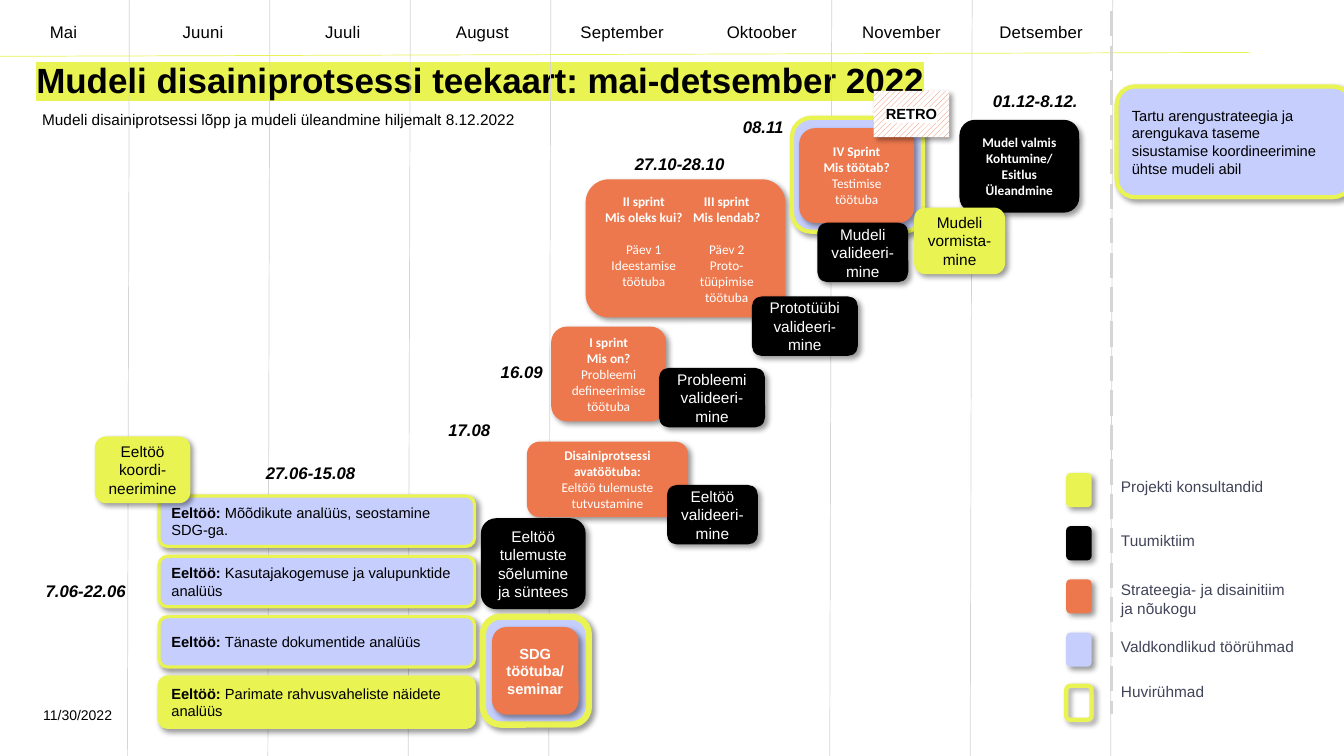
from typing import NamedTuple

from lxml.etree import SubElement
from pptx import Presentation
from pptx.dml.color import RGBColor
from pptx.enum.dml import MSO_LINE, MSO_PATTERN
from pptx.enum.shapes import MSO_CONNECTOR, MSO_SHAPE
from pptx.enum.text import MSO_ANCHOR, MSO_AUTO_SIZE, PP_ALIGN
from pptx.oxml.ns import qn
from pptx.util import Cm, Pt

BLACK = RGBColor(0x00, 0x00, 0x00)
WHITE = RGBColor(0xFF, 0xFF, 0xFF)
LIME = RGBColor(0xE9, 0xF3, 0x52)
ORANGE = RGBColor(0xEE, 0x78, 0x4D)
LILAC = RGBColor(0xC6, 0xCE, 0xFD)
GREY = RGBColor(0xD5, 0xD5, 0xD5)
SLATE = RGBColor(0x41, 0x43, 0x59)

MONTHS = ("Mai", "Juuni", "Juuli", "August", "September", "Oktoober", "November", "Detsember")


class Box(NamedTuple):
    left: float
    top: float
    width: float
    height: float

    def inner(self, left, top, width, height):
        return Box(self.left + left, self.top + top, width, height)

    def lengths(self):
        return [Cm(value) for value in self]


def bold(text):
    return [(text, True)]


def plain(text):
    return [(text, False)]


def highlight(span, color):
    fill = span.font._element.find(qn("a:solidFill"))
    mark = SubElement(span.font._element, qn("a:highlight"))
    SubElement(mark, qn("a:srgbClr"), val=str(color))
    fill.addnext(mark)


def write(frame, lines, size, color=BLACK, font="Arial", align=PP_ALIGN.LEFT, italic=False):
    frame.word_wrap = True
    for number, line in enumerate(lines):
        para = frame.add_paragraph() if number else frame.paragraphs[0]
        para.alignment = align
        for text, is_bold in line:
            span = para.add_run()
            span.text = text
            span.font.size = Pt(size)
            span.font.bold = is_bold
            span.font.italic = italic
            span.font.color.rgb = color
            span.font.name = font
    return frame


def add_label(page, box, lines, size=11, **style):
    return write(page.shapes.add_textbox(*box.lengths()).text_frame, lines, size, **style)


def add_date(page, box, text):
    add_label(page, box, [bold(text)], 12, italic=True)


def add_line(page, start, end, color, width=0.5):
    line = page.shapes.add_connector(MSO_CONNECTOR.STRAIGHT, *map(Cm, start + end))
    line.line.color.rgb = color
    line.line.width = Pt(width)
    SubElement(line._element.spPr, qn("a:effectLst"))
    return line


def add_card(page, box, fill=None, lines=(), size=11, color=BLACK, font="Arial",
             align=PP_ALIGN.CENTER, outline=0, kind=MSO_SHAPE.ROUNDED_RECTANGLE):
    card = page.shapes.add_shape(kind, *box.lengths())
    if fill is None:
        card.fill.background()
    else:
        card.fill.solid()
        card.fill.fore_color.rgb = fill
    if outline:
        card.line.color.rgb = LIME
        card.line.width = Pt(outline)
    else:
        card.line.fill.background()
    card.shadow.inherit = False
    effects = card._element.spPr.find(qn("a:effectLst"))
    shadow = SubElement(effects, qn("a:outerShdw"), blurRad=str(Pt(4)), dist=str(Pt(3)),
                        dir="2700000", algn="tl", rotWithShape="0")
    tint = SubElement(shadow, qn("a:srgbClr"), val=str(BLACK))
    SubElement(tint, qn("a:alpha"), val="40000")
    card.text_frame.vertical_anchor = MSO_ANCHOR.MIDDLE
    write(card.text_frame, lines, size, color, font, align)
    return card


def add_sprint(page, box, lines, fill=ORANGE):
    add_card(page, box, fill, lines, 9.5, WHITE, "Calibri")


def build_calendar(page, box):
    step = 3.54
    for border in (0, 1, 2, 3, 5, 6, 7):
        left = box.left + 3.26 + step * border
        add_line(page, (left, box.top), (left - 0.05, box.top + box.height), GREY)
    add_line(page, (box.left, 1.42), (box.left + 31.52, 1.32), LIME)
    year_end = add_line(page, (28.02, 0.28), (28.02, 17.98), GREY, 2.25)
    year_end.line.dash_style = MSO_LINE.LONG_DASH
    for number, month in enumerate(MONTHS):
        frame = add_label(page, box.inner(0.25 + 3.52 * number, 0.43, 2.7, 0.76),
                          [plain(month)], 12, align=PP_ALIGN.CENTER)
        frame.paragraphs[0].runs[0].font._element.set("spc", "10")


def build_heading(page, box):
    title = page.shapes.title
    title.left, title.top, title.width, title.height = box.lengths()
    frame = title.text_frame
    frame.auto_size = MSO_AUTO_SIZE.NONE
    frame.vertical_anchor = MSO_ANCHOR.TOP
    write(frame, [bold("Mudeli disainiprotsessi teekaart: mai-detsember 2022")], 25)
    frame.paragraphs[0].line_spacing = 0.9
    highlight(frame.paragraphs[0].runs[0], LIME)
    add_label(page, box.inner(0.15, 1.17, 17.35, 0.74),
              [plain("Mudeli disainiprotsessi lõpp ja mudeli üleandmine hiljemalt 8.12.2022")])


def build_prework(page, box):
    tasks = (
        ("Mõõdikute analüüs, seostamine SDG-ga.", LILAC),
        ("Kasutajakogemuse ja valupunktide analüüs", LILAC),
        ("Tänaste dokumentide analüüs", LILAC),
        ("Parimate rahvusvaheliste näidete analüüs", LIME),
    )
    for number, (task, fill) in enumerate(tasks):
        add_card(page, box.inner(3.11, 1.5 + 1.52 * number, 7.95, 1.27), fill,
                 [bold("Eeltöö: ") + plain(task)], 10.5, align=PP_ALIGN.LEFT, outline=2.25)
    add_card(page, box.inner(1.49, 0, 2.41, 1.68), LIME, [plain("Eeltöö koordi-neerimine")])
    add_card(page, box.inner(11.22, 2.06, 2.64, 2.29), BLACK,
             [plain("Eeltöö tulemuste sõelumine ja süntees")], color=WHITE)
    add_card(page, box.inner(11.27, 4.54, 2.67, 2.72), LILAC, outline=4.5)
    add_card(page, box.inner(11.5, 4.8, 2.18, 2.21), ORANGE,
             [bold("SDG töötuba/"), bold("seminar")], 10.5, WHITE)
    add_date(page, box.inner(0, 3.5, 2.9, 0.76), "7.06-22.06")
    add_date(page, box.inner(5.55, 0.53, 3.6, 0.76), "27.06-15.08")


def build_double_sprint(page, box):
    add_sprint(page, box, [])
    days = (
        ("II sprint", "Mis oleks kui?", "Päev 1", "Ideestamise töötuba"),
        ("III sprint", "Mis lendab?", "Päev 2", "Proto-tüüpimise töötuba"),
    )
    for number, (name, question, day, workshop) in enumerate(days):
        frame = add_label(page, box.inner(0.42 + 2.09 * number, 0.34, 2.09, 2.85),
                          [bold(name), bold(question), plain(day), plain(workshop)],
                          9.5, color=WHITE, font="Calibri", align=PP_ALIGN.CENTER)
        frame.margin_left = frame.margin_right = frame.margin_top = frame.margin_bottom = 0
        frame.paragraphs[2].space_before = Pt(11.6)


def build_sprints(page, box):
    add_sprint(page, box.inner(2.28, 9.13, 4.06, 1.9),
               [bold("Disainiprotsessi avatöötuba:"), plain("Eeltöö tulemuste tutvustamine")])
    add_sprint(page, box.inner(2.89, 6.23, 2.9, 2.39),
               [bold("I sprint"), bold("Mis on?"), plain("Probleemi defineerimise töötuba")])
    build_double_sprint(page, box.inner(3.76, 2.52, 5.03, 3.48))
    add_card(page, box.inner(8.96, 0.97, 3.3, 2.87), LILAC, outline=3)
    add_sprint(page, box.inner(9.14, 1.23, 2.9, 2.39),
               [bold("IV Sprint"), bold("Mis töötab?"), plain("Testimise töötuba")])
    add_sprint(page, box.inner(13.18, 1.02, 3.02, 2.34),
               [bold("Mudel valmis"), bold("Kohtumine/"), bold("Esitlus"), bold("Üleandmine")], BLACK)

    retro = add_card(page, box.inner(11.02, 0.29, 1.9, 1.17), WHITE, [bold("RETRO")], 10.5,
                     kind=MSO_SHAPE.RECTANGLE)
    retro.fill.patterned()
    retro.fill.pattern = MSO_PATTERN.WIDE_UPWARD_DIAGONAL
    retro.fill.fore_color.rgb = ORANGE
    retro.fill.back_color.rgb = WHITE
    highlight(retro.text_frame.paragraphs[0].runs[0], WHITE)

    validations = (("Eeltöö", 5.81, 10.22, 2.29), ("Probleemi", 5.61, 7.27, 2.67),
                   ("Prototüübi", 7.95, 5.47, 2.67), ("Mudeli", 9.6, 3.61, 2.29))
    for subject, left, top, width in validations:
        add_card(page, box.inner(left, top, width, 1.5), BLACK,
                 [plain(f"{subject} valideeri-mine")], color=WHITE)
    add_card(page, box.inner(12.04, 3.23, 2.29, 1.68), LIME, [plain("Mudeli vormista-mine")])

    dates = (("17.08", 0.05, 8.44), ("16.09", 1.37, 6.99), ("27.10-28.10", 4.75, 1.76),
             ("08.11", 7.47, 0.82), ("01.12-8.12.", 13.77, 0.16))
    for date, left, top in dates:
        add_date(page, box.inner(left, top, 2.9, 0.76), date)


def build_legend(page, box):
    entries = (
        (LIME, 0, -0.03, ["Projekti konsultandid"]),
        (BLACK, 0, 0, ["Tuumiktiim"]),
        (ORANGE, 0, -0.1, ["Strateegia- ja disainitiim", "ja nõukogu"]),
        (LILAC, 0, 0, ["Valdkondlikud töörühmad"]),
        (None, 3, -0.21, ["Huvirühmad"]),
    )
    for number, (fill, outline, shift, lines) in enumerate(entries):
        top = 1.34 * number
        add_card(page, box.inner(0, top, 0.64, 0.86), fill, outline=outline)
        add_label(page, box.inner(1.13, top + shift, 5.4, 0.74),
                  [plain(line) for line in lines], color=SLATE)


def build_outlook(page, box):
    add_card(page, box, LILAC, [plain("Tartu arengustrateegia ja arengukava taseme sisustamise "
                                      "koordineerimine ühtse mudeli abil")],
             10.5, align=PP_ALIGN.LEFT, outline=3)


def build_footer(page, box):
    frame = add_label(page, box, [plain("11/30/2022")], 10)
    frame.margin_left = frame.margin_right = frame.margin_top = frame.margin_bottom = 0
    frame.vertical_anchor = MSO_ANCHOR.MIDDLE


def main():
    deck = Presentation()
    deck.slide_width, deck.slide_height = Cm(33.87), Cm(19.05)
    page = deck.slides.add_slide(deck.slide_layouts[5])
    build_calendar(page, Box(0, 0, 33.87, 19.05))
    build_heading(page, Box(0.66, 1.47, 30, 3.61))
    build_prework(page, Box(0.9, 11, 13.94, 7.26))
    build_sprints(page, Box(11, 2, 16.7, 11.72))
    build_legend(page, Box(26.87, 11.92, 6.5, 6.22))
    build_outlook(page, Box(28.14, 2.18, 5.92, 2.79))
    build_footer(page, Box(1.09, 17.7, 2.46, 0.61))
    deck.save("out.pptx")


if __name__ == "__main__":
    main()
